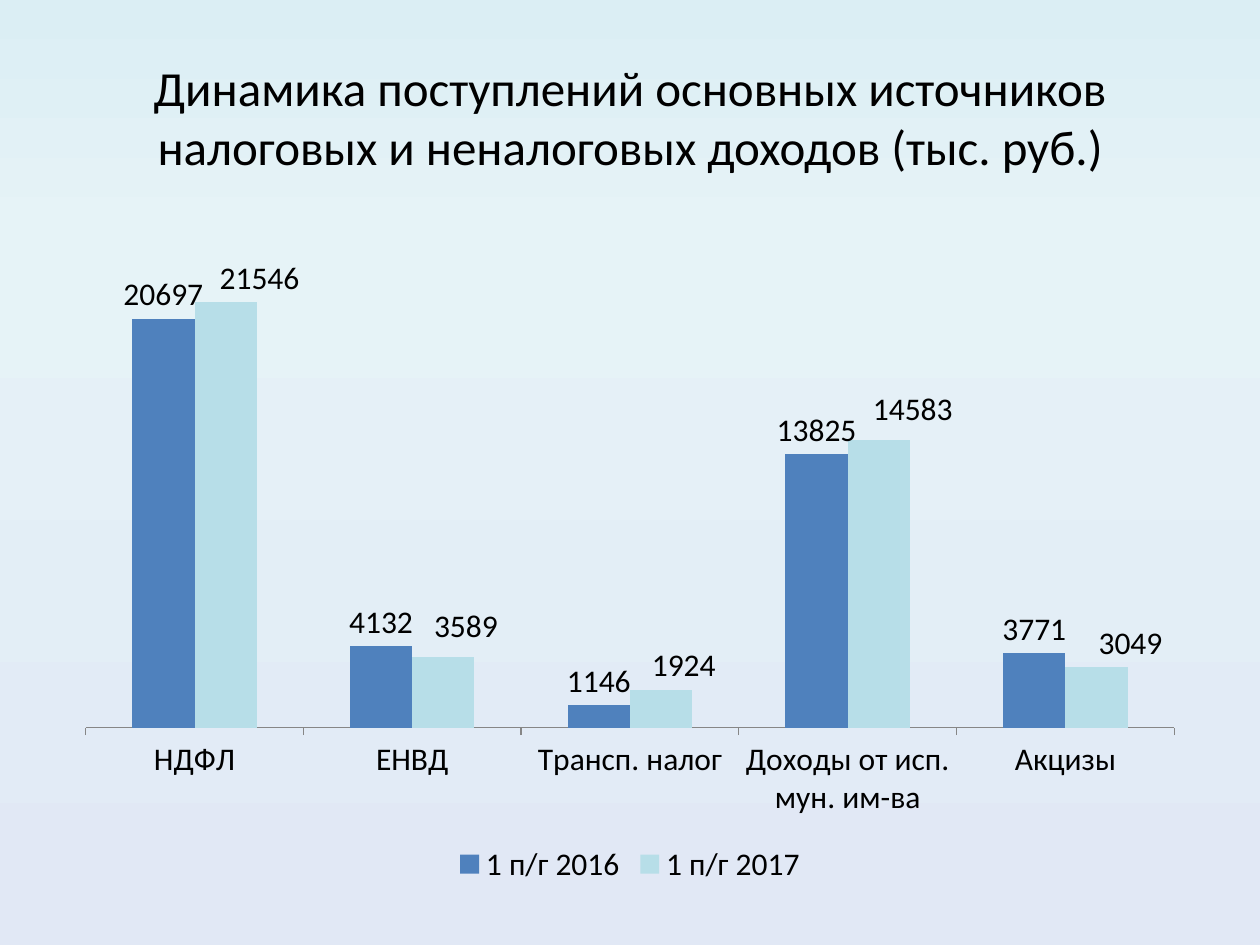
from copy import deepcopy

from pptx import Presentation
from pptx.chart.data import CategoryChartData
from pptx.dml.color import RGBColor
from pptx.enum.chart import (XL_CHART_TYPE, XL_LABEL_POSITION,
                             XL_LEGEND_POSITION, XL_TICK_MARK)
from pptx.enum.text import MSO_ANCHOR, PP_ALIGN
from pptx.oxml import parse_xml
from pptx.oxml.ns import nsdecls
from pptx.util import Inches, Pt

COLORS = {
    "bg_top": "DBEEF4", "bg_middle": "E6F3F7", "bg_bottom": "E1E8F5",
    "text": "000000", "axis": "868686",
    "2016": "4F81BD", "2017": "B7DEE8",
}
FONT = "Calibri"


def rgb(name):
    return RGBColor.from_string(COLORS[name])


def set_font(font, size):
    font.name = FONT
    font.size = Pt(size)
    font.color.rgb = rgb("text")


prs = Presentation()
prs.slide_width, prs.slide_height = Inches(10), Inches(7.5)
s = prs.slides.add_slide(prs.slide_layouts[5])

# Background: three-stop vertical gradient
fill = s.background.fill
fill.gradient()
fill.gradient_angle = 270
first_stop = s.background.fill._fill._gradFill.gsLst[0]
first_stop.addnext(deepcopy(first_stop))
for stop, name, position in zip(fill.gradient_stops,
                                ("bg_top", "bg_middle", "bg_bottom"),
                                (0, 0.25, 1)):
    stop.color.rgb = rgb(name)
    stop.position = position

# Title
title = s.shapes.title
title.left, title.top = Inches(0.5), Inches(0.3)
title.width, title.height = Inches(9), Inches(1.25)
tf = title.text_frame
tf.text = "Динамика поступлений основных источников налоговых и неналоговых доходов (тыс. руб.)"
tf.word_wrap = True
tf.vertical_anchor = MSO_ANCHOR.MIDDLE
p = tf.paragraphs[0]
p.alignment = PP_ALIGN.CENTER
set_font(p.font, 28)

# Chart
data = CategoryChartData()
data.categories = ["НДФЛ", "ЕНВД", "Трансп. налог", "Доходы от исп. мун. им-ва", "Акцизы"]
data.add_series("1 п/г 2016", (20697, 4132, 1146, 13825, 3771))
data.add_series("1 п/г 2017", (21546, 3589, 1924, 14583, 3049))
chart = s.shapes.add_chart(XL_CHART_TYPE.COLUMN_CLUSTERED, Inches(0.5), Inches(1.75),
                           Inches(9), Inches(5.31), data).chart
set_font(chart.font, 18)
chart.has_title = False
chart.has_legend = True
chart.legend.position = XL_LEGEND_POSITION.BOTTOM
chart.legend.include_in_layout = False

# Axes
chart.value_axis.visible = False
chart.value_axis.has_major_gridlines = False
axis = chart.category_axis
axis.major_tick_mark = XL_TICK_MARK.OUTSIDE
axis.format.line.color.rgb = rgb("axis")

# Columns and value labels
plot = chart.plots[0]
plot.gap_width = 150
plot.overlap = 0
plot.vary_by_categories = False
for series, year in zip(plot.series, ("2016", "2017")):
    series.format.fill.solid()
    series.format.fill.fore_color.rgb = rgb(year)
    labels = series.data_labels
    labels.show_value = True
    labels.position = XL_LABEL_POSITION.OUTSIDE_END

# Shift the 2017 labels right, clear of the 2016 ones
label_shifts = [(0.03, 0), (0.02, -0.01), (0.02, 0), (0.03, -0.01), (0.03, 0)]
label_list = plot.series[1].data_labels._element
for i, (x, y) in enumerate(label_shifts):
    label_list.insert(i, parse_xml(
        f'<c:dLbl {nsdecls("c")}><c:idx val="{i}"/>'
        f'<c:layout><c:manualLayout><c:x val="{x}"/><c:y val="{y}"/></c:manualLayout></c:layout>'
        '<c:dLblPos val="outEnd"/><c:showLegendKey val="0"/><c:showVal val="1"/>'
        '<c:showCatName val="0"/><c:showSerName val="0"/><c:showPercent val="0"/>'
        '<c:showBubbleSize val="0"/></c:dLbl>'))

prs.save("out.pptx")
